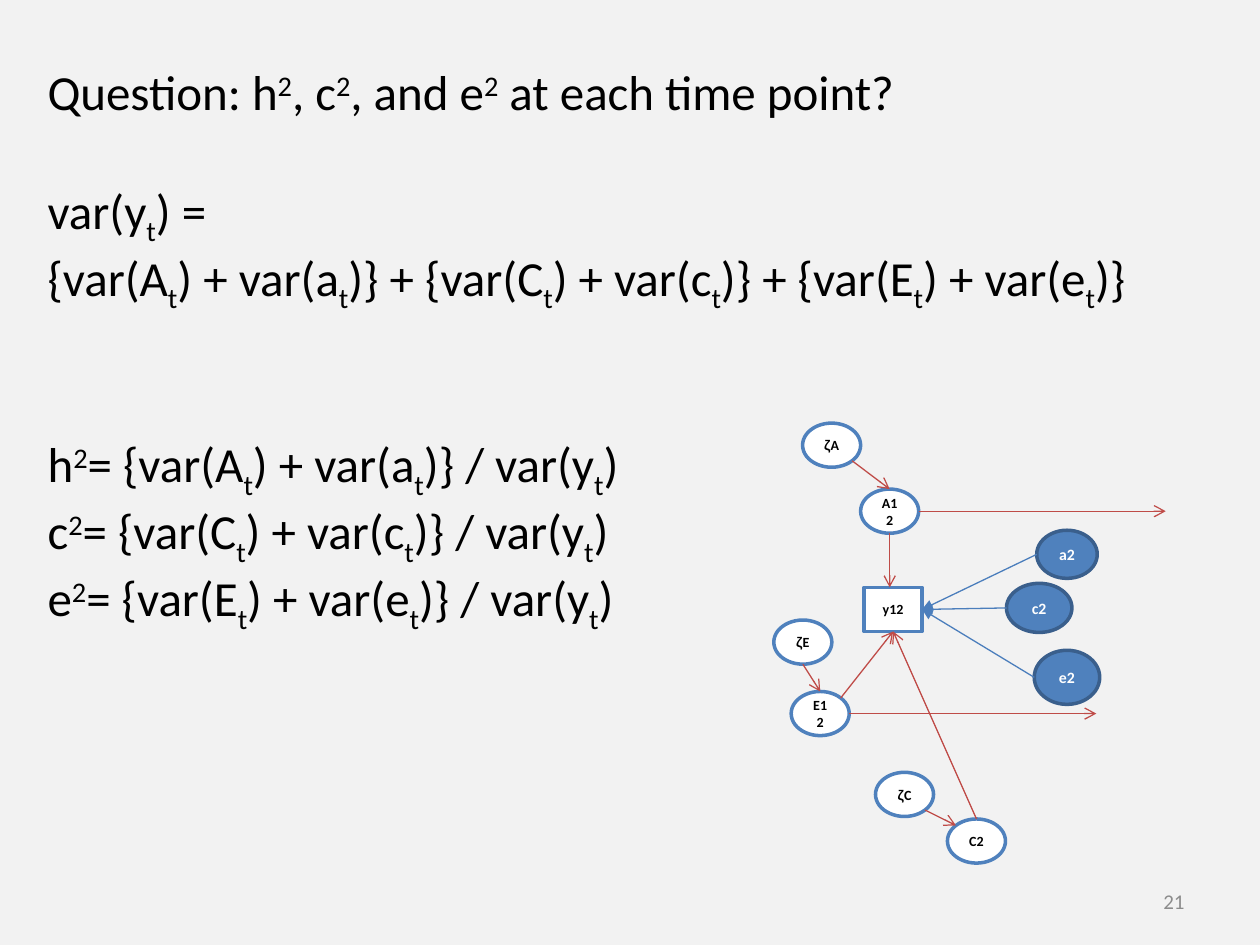
from dataclasses import dataclass
from math import sqrt

from lxml.etree import SubElement
from pptx import Presentation
from pptx.dml.color import RGBColor
from pptx.enum.shapes import MSO_CONNECTOR, MSO_SHAPE
from pptx.enum.text import MSO_ANCHOR, PP_ALIGN
from pptx.oxml.ns import qn
from pptx.util import Cm, Pt


@dataclass(frozen=True)
class Theme:
    back: str = "F2F2F2"
    ink: str = "000000"
    white: str = "FFFFFF"
    gray: str = "8C8C8C"
    blue: str = "4F81BD"
    navy: str = "3A5F8C"
    path_red: str = "BF4C48"
    path_blue: str = "4B7EBC"
    font: str = "Calibri"
    greek: str = "Arial"
    body: float = 28
    page_no: float = 12
    small: float = 8
    label: float = 9
    edge: float = 2
    thin: float = 0.75


T = Theme()
BASE = {"^": "30000", "_": "-25000"}

# Text, space before in points; ^ raises and _ lowers the next character
LINES = [
    ("Question: h^2, c^2, and e^2 at each time point?", 0),
    ("var(y_t) =", 34.2),
    ("{var(A_t) + var(a_t)} + {var(C_t) + var(c_t)} + {var(E_t) + var(e_t)}", 0),
    ("h^2= {var(A_t) + var(a_t)} / var(y_t)", 68.4),
    ("c^2= {var(C_t) + var(c_t)} / var(y_t)", 0),
    ("e^2= {var(E_t) + var(e_t)} / var(y_t)", 0),
]

# Latent factors and their innovations: left, top
FACTORS = {
    "E12": (15.95, 13.94), "C2": (19.1, 16.51), "A12": (17.35, 9.86),
    "ζA": (16.18, 8.53), "ζE": (15.6, 12.5), "ζC": (17.65, 15.57),
}
# Time-specific terms: left, top, width, height
TERMS = {
    "a2": (20.9, 10.69, 1.22, 0.97),
    "c2": (20.29, 11.76, 1.32, 0.99),
    "e2": (20.85, 13.11, 1.32, 1.09),
}
SIZE = (1.17, 0.89)
REACH = Cm(4.98)

# Directions from the centre of a node to its edge
DIAG = 1 / sqrt(2)
TOP, LOW, LEFT, RIGHT = (0, -1), (0, 1), (-1, 0), (1, 0)
TOP_LEFT, TOP_RIGHT, LOW_RIGHT = (-DIAG, -DIAG), (DIAG, -DIAG), (DIAG, DIAG)


def add_run(para, text, size, color, bold=False, base=None):
    run = para.add_run()
    run.text = text
    font = run.font
    font.name = T.greek if text == "ζ" else T.font
    font.size, font.bold = Pt(size), bold
    font.color.rgb = RGBColor.from_string(color)
    if base:
        run._r.get_or_add_rPr().set("baseline", base)


def add_math(para, text):
    for part in text.replace("^", "|^").replace("_", "|_").split("|"):
        if part[0] in BASE:
            add_run(para, part[1], T.body, T.ink, base=BASE[part[0]])
            part = part[2:]
        if part:
            add_run(para, part, T.body, T.ink)


def add_box(slide, *place):
    frame = slide.shapes.add_textbox(*map(Cm, place)).text_frame
    frame.word_wrap = True
    return frame


def add_node(slide, kind, text, place, fill, edge, color, size):
    node = slide.shapes.add_shape(kind, *map(Cm, place))
    node.shadow.inherit = False
    node.fill.solid()
    node.fill.fore_color.rgb = RGBColor.from_string(fill)
    node.line.color.rgb = RGBColor.from_string(edge)
    node.line.width = Pt(T.edge)
    frame = node.text_frame
    frame.word_wrap = True
    frame.vertical_anchor = MSO_ANCHOR.MIDDLE
    para = frame.paragraphs[0]
    para.alignment = PP_ALIGN.CENTER
    parts = ["ζ", text[1:]] if text[0] == "ζ" else [text]
    for part in parts:
        add_run(para, part, size, color, bold=True)
    return node


def spot(node, way):
    return (round(node.left + node.width * (1 + way[0]) / 2),
            round(node.top + node.height * (1 + way[1]) / 2))


def add_arrow(slide, start, end, color, head="arrow", join=None):
    line = slide.shapes.add_connector(MSO_CONNECTOR.STRAIGHT, *start, *end)
    line.line.color.rgb = RGBColor.from_string(color)
    line.line.width = Pt(T.thin)
    SubElement(line.line._get_or_add_ln(), qn("a:tailEnd"), type=head)
    SubElement(line._element.spPr, qn("a:effectLst"))
    if join:
        line.end_connect(*join)


def add_model(slide):
    # Nodes
    look = (T.white, T.blue, T.ink, T.small)
    seen = add_node(slide, MSO_SHAPE.RECTANGLE, "y12", (17.42, 11.84, *SIZE), *look)
    node = {name: add_node(slide, MSO_SHAPE.OVAL, name, (*at, *SIZE), *look)
            for name, at in FACTORS.items()}
    terms = [add_node(slide, MSO_SHAPE.OVAL, name, place,
                      T.blue, T.navy, T.white, T.label)
             for name, place in TERMS.items()]

    # Innovations to factors
    for one, way, two, side in [("ζA", LOW_RIGHT, "A12", TOP),
                                ("ζE", LOW, "E12", TOP),
                                ("ζC", LOW_RIGHT, "C2", TOP_LEFT)]:
        add_arrow(slide, spot(node[one], way), spot(node[two], side), T.path_red)

    # Factors to the observed score
    for name, way in [("E12", TOP_RIGHT), ("C2", TOP)]:
        add_arrow(slide, spot(node[name], way), spot(seen, LOW),
                  T.path_red, join=(seen, 2))
    x, y = spot(node["A12"], LOW)
    add_arrow(slide, (x, y), (x, seen.top), T.path_red)

    # Factors onward in time
    for name in ("E12", "A12"):
        x, y = spot(node[name], RIGHT)
        add_arrow(slide, (x, y), (x + REACH, y), T.path_red)

    # Time-specific terms to the observed score
    for term in terms:
        add_arrow(slide, spot(term, LEFT), spot(seen, RIGHT),
                  T.path_blue, "triangle", (seen, 3))


def main():
    deck = Presentation()
    deck.slide_width, deck.slide_height = Cm(25.4), Cm(19.05)
    slide = deck.slides.add_slide(deck.slide_layouts[6])
    slide.background.fill.solid()
    slide.background.fill.fore_color.rgb = RGBColor.from_string(T.back)

    # Page number
    frame = add_box(slide, 18.2, 17.66, 5.93, 1.01)
    frame.vertical_anchor = MSO_ANCHOR.MIDDLE
    frame.paragraphs[0].alignment = PP_ALIGN.RIGHT
    add_run(frame.paragraphs[0], "21", T.page_no, T.gray)

    # Question and formulas
    frame = add_box(slide, 0.71, 1.12, 24.41, 11.02)
    for i, (text, gap) in enumerate(LINES):
        para = frame.add_paragraph() if i else frame.paragraphs[0]
        para.space_before = Pt(gap)
        add_math(para, text)

    add_model(slide)
    deck.save("out.pptx")


if __name__ == "__main__":
    main()
